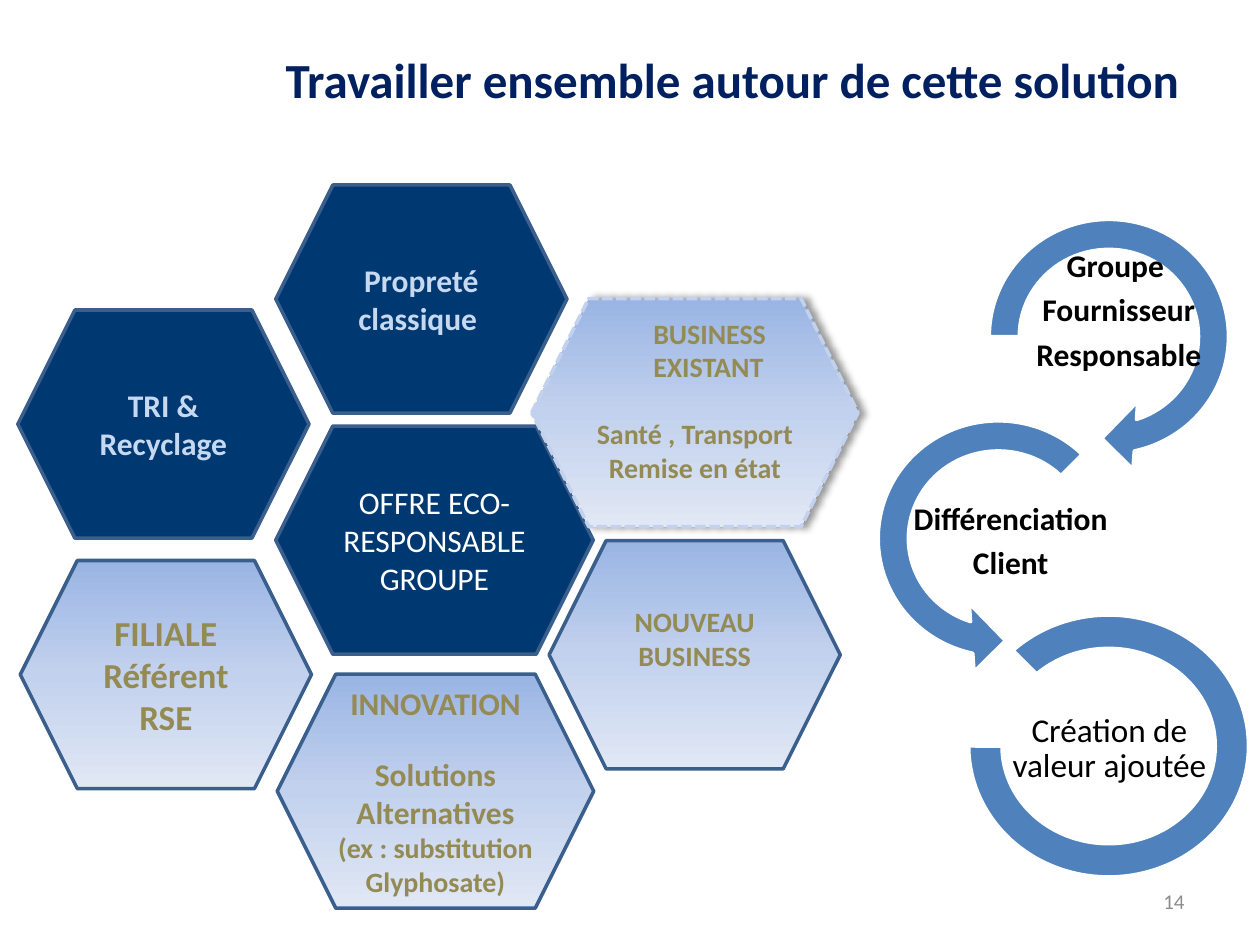
from copy import deepcopy
from dataclasses import dataclass

from lxml.etree import SubElement
from pptx import Presentation
from pptx.dml.color import RGBColor
from pptx.enum.dml import MSO_LINE
from pptx.enum.shapes import MSO_SHAPE
from pptx.enum.text import MSO_ANCHOR, PP_ALIGN
from pptx.oxml.ns import qn
from pptx.util import Cm, Pt

FONT = "Calibri"
NAVY, SKY, GOLD, WHITE, BLACK = "003871", "C6D9F1", "948A54", "FFFFFF", "000000"
EDGE, ARROW, PALE = "3A5F8C", "4F81BD", "C2D1ED"
GRADIENT = ((0, "9AB5E4"), (0.5, PALE), (1, "E1E8F5"))


@dataclass
class Line:
    text: str
    size: int = 18
    before: int = 0
    indent: float = 0  # cm; an indented line is left-aligned


@dataclass
class Hexagon:
    left: float
    top: float
    lines: list[Line]
    color: str
    width: float = 5.87
    height: float = 4.6
    gradient: bool = True
    bold: bool = True
    raised: bool = False
    lift: float = 0  # extra bottom inset, cm


@dataclass
class Step:
    shape: MSO_SHAPE
    box: tuple[float, ...]
    adjustments: tuple[float, ...]
    text_box: tuple[float, ...]
    lines: list[Line]
    bold: bool = True


def rgb(color: str) -> RGBColor:
    return RGBColor.from_string(color)


def place(box: tuple[float, ...]) -> list[Cm]:
    return [Cm(v) for v in box]


def write(tf, lines: list[Line], color: str, bold: bool = False,
          align=PP_ALIGN.CENTER, spacing: float = 1.0) -> None:
    tf.word_wrap = True
    tf.vertical_anchor = MSO_ANCHOR.MIDDLE
    for i, line in enumerate(lines):
        p = tf.add_paragraph() if i else tf.paragraphs[0]
        p.text = line.text
        p.alignment = PP_ALIGN.LEFT if line.indent else align
        p.line_spacing = spacing
        if line.before:
            p.space_before = Pt(line.before)
        if line.indent:
            p._p.get_or_add_pPr().set("marL", str(Cm(line.indent)))
        for r in p.runs:
            r.font.name, r.font.size, r.font.bold = FONT, Pt(line.size), bold
            r.font.color.rgb = rgb(color)


def fill_gradient(sp) -> None:
    """Fill top to bottom, with a middle stop added to the default two."""
    sp.fill.gradient()
    sp.fill.gradient_angle = 270
    stop_list = sp._element.spPr.find(".//" + qn("a:gsLst"))
    stop_list.insert(1, deepcopy(stop_list[0]))
    for stop, (position, color) in zip(sp.fill.gradient_stops, GRADIENT):
        stop.position = position
        stop.color.rgb = rgb(color)


def add_shadow(sp) -> None:
    effects = sp._element.spPr.find(qn("a:effectLst"))
    shadow = SubElement(effects, qn("a:outerShdw"), blurRad=str(Pt(4)),
                        dist=str(Pt(3)), dir="0", algn="l", rotWithShape="0")
    color = SubElement(shadow, qn("a:srgbClr"), val=BLACK)
    SubElement(color, qn("a:alpha"), val="40000")


def add_outlined(s, shape: MSO_SHAPE, box: tuple[float, ...], line: str):
    sp = s.shapes.add_shape(shape, *place(box))
    sp.shadow.inherit = False
    sp.line.color.rgb = rgb(line)
    sp.line.width = Pt(2)
    return sp


def add_hexagon(s, h: Hexagon) -> None:
    sp = add_outlined(s, MSO_SHAPE.HEXAGON, (h.left, h.top, h.width, h.height),
                      PALE if h.raised else EDGE)
    if h.gradient:
        fill_gradient(sp)
    else:
        sp.fill.solid()
        sp.fill.fore_color.rgb = rgb(NAVY)
    if h.raised:
        sp.line.dash_style = MSO_LINE.SQUARE_DOT
        add_shadow(sp)
    sp.text_frame.margin_bottom = Cm(0.13 + h.lift)
    write(sp.text_frame, h.lines, h.color, h.bold)


def add_step(s, step: Step) -> None:
    sp = add_outlined(s, step.shape, step.box, WHITE)
    sp.fill.solid()
    sp.fill.fore_color.rgb = rgb(ARROW)
    for i, value in enumerate(step.adjustments):
        sp.adjustments[i] = value
    tf = s.shapes.add_textbox(*place(step.text_box)).text_frame
    tf.margin_left = tf.margin_right = tf.margin_top = tf.margin_bottom = Cm(0.03)
    write(tf, step.lines, BLACK, step.bold, spacing=0.9)


HEXAGONS = [
    Hexagon(5.56, 8.59, [Line("OFFRE ECO-RESPONSABLE GROUPE")], WHITE,
            width=6.4, gradient=False, bold=False),
    Hexagon(5.59, 13.59, [Line("INNOVATION"), Line("Solutions", before=19),
                          Line("Alternatives"), Line("(ex : substitution", 16),
                          Line("Glyphosate)", 16)], GOLD, width=6.38, height=4.72),
    Hexagon(11.07, 10.9, [Line("NOUVEAU", 16), Line("BUSINESS", 16)], GOLD, lift=0.65),
    Hexagon(0.41, 11.3, [Line("FILIALE", 20), Line("Référent", 20), Line("RSE", 20)], GOLD),
    Hexagon(0.36, 6.25, [Line("TRI & Recyclage")], SKY, gradient=False),
    Hexagon(5.56, 3.73, [Line("Propreté classique ")], SKY, gradient=False),
    Hexagon(10.72, 6.02, [Line("BUSINESS EXISTANT", 16, indent=1.27),
                          Line("Santé , Transport", 16, before=19),
                          Line("Remise en état", 16)], GOLD,
            width=6.58, raised=True, lift=0.5),
]

STEPS = [
    Step(MSO_SHAPE.CIRCULAR_ARROW, (19.56, 4.04, 5.59, 5.49),
         (0.11, 11.42, 45, 108, 0.125), (20.22, 4.67, 4.67, 3.23),
         [Line("Groupe "), Line("Fournisseur", before=6), Line("Responsable", before=6)]),
    Step(MSO_SHAPE.LEFT_CIRCULAR_ARROW, (17.32, 8.1, 5.61, 5.51),
         (0.11, 11.42, 63, 189, 0.125), (17.86, 9.93, 5.03, 2.01),
         [Line("Différenciation"), Line("Client", before=6)]),
    Step(MSO_SHAPE.BLOCK_ARC, (19.53, 12.4, 5.64, 5.28),
         (135, 108, 0.127), (20.37, 14.1, 3.99, 2.01),
         [Line("Création de valeur ajoutée", 19)], bold=False),
]


def main() -> None:
    prs = Presentation()
    prs.slide_width, prs.slide_height = Cm(25.4), Cm(19.05)
    s = prs.slides.add_slide(prs.slide_layouts[5])

    title = s.shapes.title
    title.left, title.top, title.width, title.height = place((3.33, 0, 22.86, 3.18))
    write(title.text_frame, [Line("Travailler ensemble autour de cette solution", 28)],
          "002060", bold=True)

    number = s.shapes.add_textbox(*place((18.21, 17.65, 5.92, 1.02)))
    write(number.text_frame, [Line("14", 12)], "8C8C8C", align=PP_ALIGN.RIGHT)

    for hexagon in HEXAGONS:
        add_hexagon(s, hexagon)
    for step in STEPS:
        add_step(s, step)
    prs.save("out.pptx")


if __name__ == "__main__":
    main()
